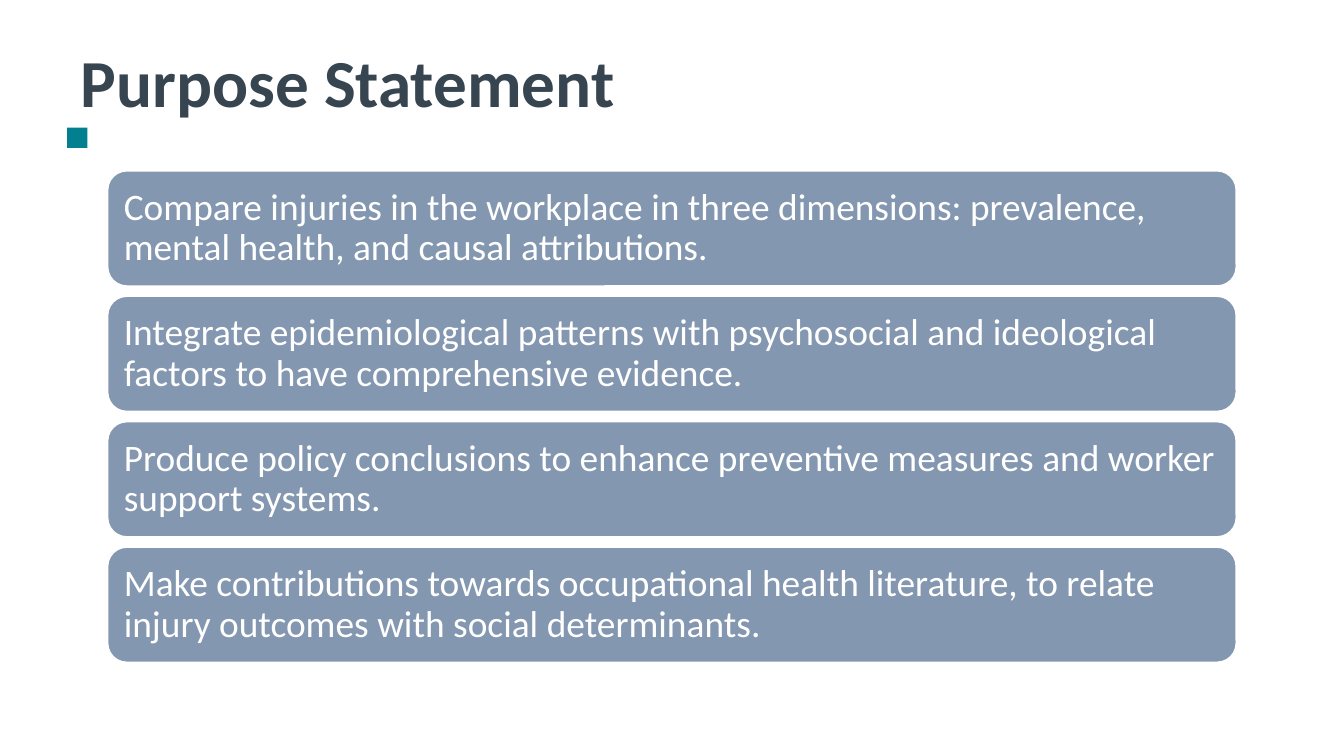
from pptx import Presentation
from pptx.dml.color import RGBColor
from pptx.enum.shapes import MSO_SHAPE as Shape
from pptx.enum.text import MSO_ANCHOR as Anchor, MSO_AUTO_SIZE as AutoSize, PP_ALIGN as Align
from pptx.util import Inches, Pt

COLORS = {"title": "36454F", "accent": "028090", "card": "8497B0", "white": "FFFFFF"}
FONT = "Calibri"
SLIDE_WIDTH = 10
SLIDE_HEIGHT = SLIDE_WIDTH * 9 / 16
MARGIN = 0.5
CARD_LEFT, CARD_TOP = 0.8, 1.27
CARD_WIDTH, CARD_HEIGHT = SLIDE_WIDTH - 2 * CARD_LEFT, 0.86
ROW_PITCH = 2.8 / 3
CARD_INSET = 0.08

PURPOSES = [
    "Compare injuries in the workplace in three dimensions: prevalence, "
    "mental health, and causal attributions.",
    "Integrate epidemiological patterns with psychosocial and ideological "
    "factors to have comprehensive evidence.",
    "Produce policy conclusions to enhance preventive measures and worker "
    "support systems.",
    "Make contributions towards occupational health literature, to relate "
    "injury outcomes with social determinants.",
]


def color(name):
    return RGBColor.from_string(COLORS[name])


def write(shape, text, size, color_name, bold=False):
    """Put one left-aligned, vertically centred paragraph into a shape."""
    frame = shape.text_frame
    frame.text = text
    frame.word_wrap = True
    frame.auto_size = AutoSize.NONE
    frame.vertical_anchor = Anchor.MIDDLE
    para = frame.paragraphs[0]
    para.alignment = Align.LEFT
    font = para.runs[0].font
    font.name, font.size, font.bold = FONT, Pt(size), bold
    font.color.rgb = color(color_name)
    return frame


def set_title(page, text):
    title = page.shapes.title
    title.left, title.top = Inches(MARGIN), Inches(0.3)
    title.width, title.height = Inches(SLIDE_WIDTH - 2 * MARGIN), Inches(0.6)
    write(title, text, 36, "title", bold=True)


def add_block(page, preset, left, top, width, height, fill):
    block = page.shapes.add_shape(
        preset, Inches(left), Inches(top), Inches(width), Inches(height))
    block.shadow.inherit = False
    block.fill.solid()
    block.fill.fore_color.rgb = color(fill)
    block.line.fill.background()
    return block


def add_card(page, row, text):
    card = add_block(page, Shape.ROUNDED_RECTANGLE, CARD_LEFT,
                     CARD_TOP + row * ROW_PITCH, CARD_WIDTH, CARD_HEIGHT, "card")
    card.line.color.rgb = color("white")
    card.line.width = Pt(1)
    frame = write(card, text, 20, "white")
    frame.margin_left = frame.margin_right = Inches(CARD_INSET)
    frame.margin_top = frame.margin_bottom = Inches(CARD_INSET)
    frame.paragraphs[0].line_spacing = 0.9


def main():
    deck = Presentation()
    deck.slide_width, deck.slide_height = Inches(SLIDE_WIDTH), Inches(SLIDE_HEIGHT)
    page = deck.slides.add_slide(deck.slide_layouts[5])
    set_title(page, "Purpose Statement")
    add_block(page, Shape.RECTANGLE, MARGIN, 0.95, 0.15, 0.15, "accent")
    for row, text in enumerate(PURPOSES):
        add_card(page, row, text)
    deck.save("out.pptx")


if __name__ == "__main__":
    main()
